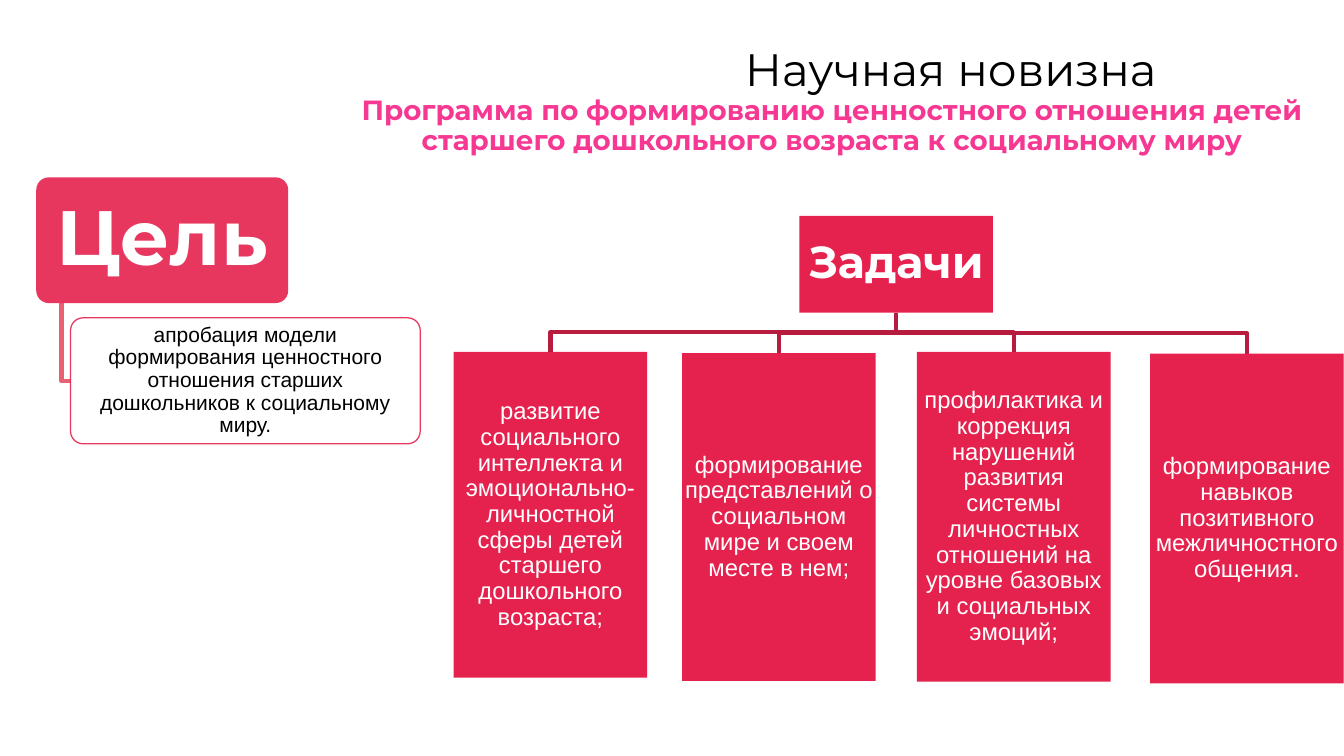
"""Builds the slide on scientific novelty: a goal card and a tree of four tasks."""
from lxml import etree
from pptx import Presentation
from pptx import util as u
from pptx.dml.color import RGBColor
from pptx.enum import shapes, text
from pptx.oxml.ns import qn

CRIMSON = RGBColor(0xE5, 0x22, 0x4E)
DARK_RED = RGBColor(0xB7, 0x1B, 0x3E)
ROSE = RGBColor(0xE8, 0x61, 0x73)
PINK = RGBColor(0xF6, 0x38, 0x92)
WHITE = RGBColor(0xFF, 0xFF, 0xFF)
BLACK = RGBColor(0, 0, 0)
HEADING = "Montserrat"
BODY = "Arial"
RECT = shapes.MSO_SHAPE.RECTANGLE
ROUNDED = shapes.MSO_SHAPE.ROUNDED_RECTANGLE

deck = Presentation()
deck.slide_width, deck.slide_height = u.Pt(960), u.Pt(540)
page = deck.slides.add_slide(deck.slide_layouts[6])


def add_card(kind, place, fill, margins, wording, font, outline=None):
    card = page.shapes.add_shape(kind, *map(u.Pt, place))
    card.shadow.inherit = False
    card.fill.solid()
    card.fill.fore_color.rgb = fill
    card.line.fill.background()
    if outline is not None:
        card.line.color.rgb = outline
        card.line.width = u.Pt(0.9)
    if kind == ROUNDED:
        card.adjustments[0] = 0.1
        for color in card._element.spPr.iter(qn("a:srgbClr")):
            etree.SubElement(color, qn("a:alpha"), val="90000")
    frame = card.text_frame
    side, edge = map(u.Pt, margins)
    layout = {"word_wrap": True, "vertical_anchor": text.MSO_ANCHOR.MIDDLE,
              "margin_left": side, "margin_right": side,
              "margin_top": edge, "margin_bottom": edge}
    for name, value in layout.items():
        setattr(frame, name, value)
    add_text(frame.paragraphs[0], wording, font)


def add_text(para, wording, font):
    para.alignment = text.PP_ALIGN.CENTER
    para.line_spacing = 0.9
    span = para.add_run()
    span.text = wording
    for name, value in font.items():
        if name == "color":
            span.font.color.rgb = value
        else:
            setattr(span.font, name, value)


title_box = page.shapes.add_textbox(u.Pt(228), u.Pt(22), u.Pt(732), u.Pt(101.5))
title_frame = title_box.text_frame
title_frame.word_wrap = True
title_frame.vertical_anchor = text.MSO_ANCHOR.MIDDLE
title = title_frame.paragraphs[0]
add_text(title, "Научная новизна",
         {"name": HEADING, "size": u.Pt(32.4), "color": BLACK})
title._p.get_or_add_pPr().set("marL", str(u.Pt(170)))
add_text(title_frame.add_paragraph(),
         "Программа по формированию ценностного отношения детей "
         "старшего дошкольного возраста к социальному миру",
         {"name": HEADING, "size": u.Pt(19.8), "bold": True, "color": PINK})

tasks = [
    (324, 251.4, 232.6, "развитие социального интеллекта и эмоционально-личностной "
     "сферы детей старшего дошкольного возраста;"),
    (487.2, 252.2, 234.2, "формирование представлений о социальном мире и своем месте в нем;"),
    (655, 251.3, 235.7, "профилактика и коррекция нарушений развития системы личностных "
     "отношений на уровне базовых и социальных эмоций;"),
    (821.5, 252.5, 235.6, "формирование навыков позитивного межличностного общения."),
]
card_width = 138.3
root_x, root_bottom = 640, 223.4

links = [([(43.9, 216.5), (43.9, 272), (50.4, 272)], ROSE)]
for left, top, height, wording in reversed(tasks):
    middle = left + card_width / 2
    bend = (root_bottom + top) / 2
    links.append(([(root_x, root_bottom), (root_x, bend), (middle, bend), (middle, top)],
                  DARK_RED))
for points, color in links:
    start, *rest = [(u.Pt(x), u.Pt(y)) for x, y in points]
    builder = page.shapes.build_freeform(*start)
    builder.add_line_segments(rest, close=False)
    link = builder.convert_to_shape()
    link.shadow.inherit = False
    link.fill.background()
    link.line.color.rgb = color
    link.line.width = u.Pt(3.15)

add_card(ROUNDED, (25.9, 126.7, 180, 89.8), CRIMSON, (8, 5.5), "Цель",
         {"name": HEADING, "size": u.Pt(55), "bold": True, "color": WHITE})
add_card(ROUNDED, (50.4, 227, 249.8, 90), WHITE, (2, 1.5),
         "апробация модели формирования ценностного отношения старших "
         "дошкольников к социальному миру.",
         {"name": BODY, "size": u.Pt(15), "color": BLACK}, CRIMSON)
add_card(RECT, (571, 154.2, card_width, 69.2), CRIMSON, (1.6, 1.6), "Задачи",
         {"name": HEADING, "size": u.Pt(32), "bold": True, "color": WHITE})
for left, top, height, wording in tasks:
    add_card(RECT, (left, top, card_width, height), CRIMSON, (0.8, 0.8), wording,
             {"name": BODY, "size": u.Pt(17), "color": WHITE})

deck.save("out.pptx")
